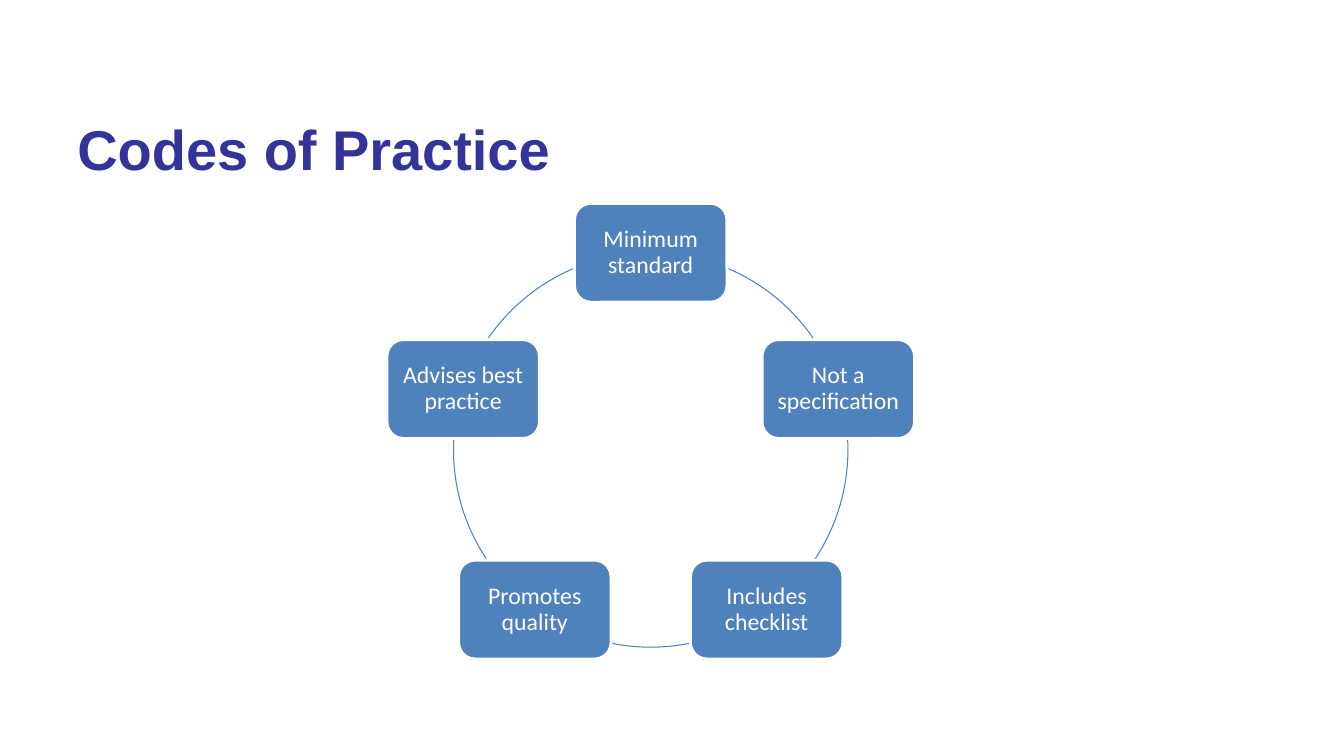
"""Build the Codes of Practice slide with its ring of five points."""
from dataclasses import dataclass
from math import cos, radians, sin

from pptx import Presentation
from pptx.dml.color import RGBColor
from pptx.enum.shapes import MSO_SHAPE
from pptx.enum.text import MSO_ANCHOR, PP_ALIGN
from pptx.shapes.autoshape import Shape
from pptx.shapes.shapetree import SlideShapes
from pptx.util import Cm, Pt

ROUNDED, ARC = MSO_SHAPE.ROUNDED_RECTANGLE, MSO_SHAPE.ARC
MIDDLE = MSO_ANCHOR.MIDDLE
LEFT, CENTER = PP_ALIGN.LEFT, PP_ALIGN.CENTER

NAVY, BLUE, WHITE = "333399", "4F81BD", "FFFFFF"
CENTER_X, CENTER_Y, RADIUS = 16.4, 11.34, 4.97
BOX_WIDTH, BOX_HEIGHT = 3.84, 2.49
ADJUSTMENT_PER_DEGREE = 0.6


@dataclass(frozen=True)
class Point:
    """A point on the ring and the angles of the arc that follows it."""
    text: str
    arc_start: float
    arc_end: float


POINTS = (
    Point("Minimum standard", 293.1, 325.6),
    Point("Not a specification", 356.9, 33.7),
    Point("Includes checklist", 78.6, 101.4),
    Point("Promotes quality", 146.3, 183.1),
    Point("Advises best practice", 214.4, 246.9),
)


def color(value: str) -> RGBColor:
    """Turn a hex string into a colour."""
    return RGBColor.from_string(value)


def write(box: Shape, text: str, *, size: float, font: str, fill: str,
          bold: bool = False, align: PP_ALIGN = LEFT,
          spacing: float = 1.0, inset: float = 0.25) -> None:
    """Put one formatted paragraph in a box."""
    frame = box.text_frame
    frame.word_wrap = True
    frame.vertical_anchor = MIDDLE
    frame.margin_left = frame.margin_right = Cm(inset)
    frame.margin_top = frame.margin_bottom = Cm(inset)
    para = frame.paragraphs[0]
    para.alignment = align
    para.line_spacing = spacing
    span = para.add_run()
    span.text = text
    span.font.size = Pt(size)
    span.font.name = font
    span.font.bold = bold
    span.font.color.rgb = color(fill)


def draw_arc(shapes: SlideShapes, point: Point) -> None:
    """Draw the piece of ring that follows a point."""
    arc = shapes.add_shape(ARC, Cm(CENTER_X - RADIUS), Cm(CENTER_Y - RADIUS),
                           Cm(2 * RADIUS), Cm(2 * RADIUS))
    arc.shadow.inherit = False
    arc.fill.background()
    arc.line.color.rgb = color(BLUE)
    arc.line.width = Pt(0.75)
    arc.adjustments[0] = point.arc_start * ADJUSTMENT_PER_DEGREE
    arc.adjustments[1] = point.arc_end * ADJUSTMENT_PER_DEGREE


def draw_box(shapes: SlideShapes, point: Point, angle: float) -> None:
    """Draw the box of a point, centred on the ring."""
    left = CENTER_X + RADIUS * cos(radians(angle)) - BOX_WIDTH / 2
    top = CENTER_Y + RADIUS * sin(radians(angle)) - BOX_HEIGHT / 2
    box = shapes.add_shape(ROUNDED, Cm(left), Cm(top),
                           Cm(BOX_WIDTH), Cm(BOX_HEIGHT))
    box.shadow.inherit = False
    box.fill.solid()
    box.fill.fore_color.rgb = color(BLUE)
    box.line.color.rgb = color(WHITE)
    box.line.width = Pt(2)
    write(box, point.text, size=17, font="Calibri", fill=WHITE,
          align=CENTER, spacing=0.9, inset=0.17)


def main() -> None:
    """Build and save the deck."""
    deck = Presentation()
    deck.slide_width, deck.slide_height = Cm(33.87), Cm(19.05)
    page = deck.slides.add_slide(deck.slide_layouts[6])
    title = page.shapes.add_textbox(Cm(1.7), Cm(2.13), Cm(30.48), Cm(3.18))
    write(title, "Codes of Practice", size=40, font="Arial", fill=NAVY, bold=True)
    for point in POINTS:
        draw_arc(page.shapes, point)
    for index, point in enumerate(POINTS):
        draw_box(page.shapes, point, -90 + index * 360 / len(POINTS))
    deck.save("out.pptx")


if __name__ == "__main__":
    main()
